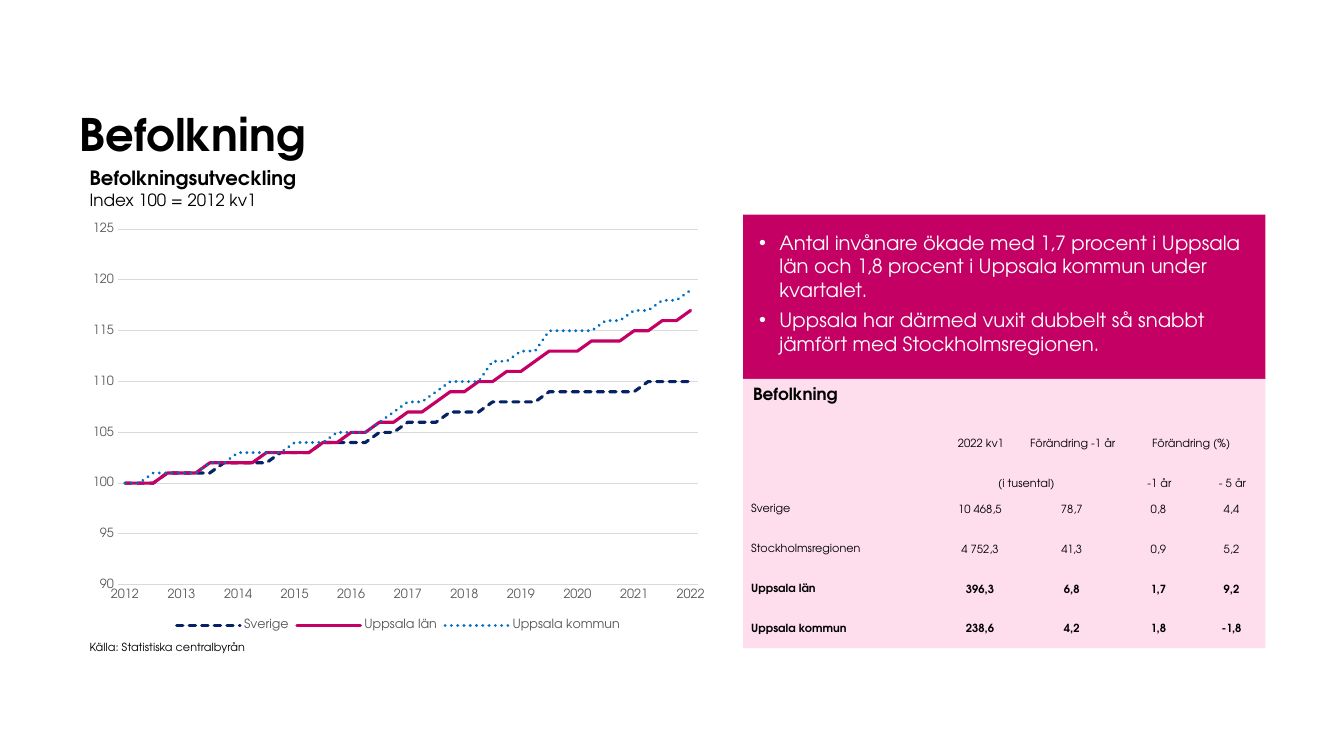
from dataclasses import dataclass

import lxml.etree
import pptx
import pptx.chart.data
import pptx.dml.color
import pptx.enum.chart
import pptx.enum.dml
import pptx.enum.shapes
import pptx.enum.text
import pptx.oxml
import pptx.oxml.ns
import pptx.util

PX = 9144  # 100 px to the inch
NO_TABLE_STYLE = "{2D5ABB26-0587-4C30-8999-92F81FD0307C}"
ALIGN = pptx.enum.text.PP_ALIGN
ANCHOR = pptx.enum.text.MSO_ANCHOR


@dataclass(frozen=True)
class Theme:
    font: str = "TeX Gyre Adventor"
    black: str = "000000"
    white: str = "FFFFFF"
    grey: str = "595959"
    grid: str = "D9D9D9"
    navy: str = "052364"
    magenta: str = "C40064"
    blue: str = "006EBF"
    pink: str = "FEDEED"
    title: int = 32
    lead: int = 14
    label: int = 12
    axis: int = 9
    small: int = 8


THEME = Theme()

YEARS = range(2012, 2023)
QUARTERS = [str(year) if quarter == 0 else ""
            for year in YEARS for quarter in range(4)][:41]
# Name, colour, dash pattern and quarterly index
POPULATION = [
    ("Sverige", THEME.navy, "sysDash", [
        100, 100, 100, 101, 101, 101, 101, 102, 102, 102, 102,
        103, 103, 103, 104, 104, 104, 104, 105, 105, 106, 106,
        106, 107, 107, 107, 108, 108, 108, 108, 109, 109, 109,
        109, 109, 109, 109, 110, 110, 110, 110]),
    ("Uppsala län", THEME.magenta, "solid", [
        100, 100, 100, 101, 101, 101, 102, 102, 102, 102, 103,
        103, 103, 103, 104, 104, 105, 105, 106, 106, 107, 107,
        108, 109, 109, 110, 110, 111, 111, 112, 113, 113, 113,
        114, 114, 114, 115, 115, 116, 116, 117]),
    ("Uppsala kommun", THEME.blue, "sysDot", [
        100, 100, 101, 101, 101, 101, 102, 102, 103, 103, 103,
        103, 104, 104, 104, 105, 105, 105, 106, 107, 108, 108,
        109, 110, 110, 110, 112, 112, 113, 113, 115, 115, 115,
        115, 116, 116, 117, 117, 118, 118, 119]),
]

FINDINGS = [
    "Antal invånare ökade med 1,7 procent i Uppsala län och 1,8 procent i "
    "Uppsala kommun under kvartalet.",
    "Uppsala har därmed vuxit dubbelt så snabbt jämfört med Stockholmsregionen.",
]
TABLE_ROWS = [
    ["", "2022 kv1", "Förändring -1 år", "Förändring (%)", ""],
    ["", "(i tusental)", "", "-1 år", "- 5 år"],
    ["Sverige", "10 468,5", "78,7", "0,8", "4,4"],
    ["Stockholmsregionen", "4 752,3", "41,3", "0,9", "5,2"],
    ["Uppsala län", "396,3", "6,8", "1,7", "9,2"],
    ["Uppsala kommun", "238,6", "4,2", "1,8", "-1,8"],
]


def emu(*lengths):
    return [pptx.util.Emu(length * PX) for length in lengths]


def rgb(code):
    return pptx.dml.color.RGBColor.from_string(code)


def style(font, size, color=THEME.black, bold=False):
    font.name, font.size, font.bold = THEME.font, pptx.util.Pt(size), bold
    font.color.rgb = rgb(color)


def set_margins(holder, left, top, right, bottom):
    (holder.margin_left, holder.margin_top,
     holder.margin_right, holder.margin_bottom) = emu(left, top, right, bottom)


def move(shape, box):
    shape.left, shape.top, shape.width, shape.height = emu(*box)


def add_label(slide, box, text, size, bold=False):
    frame = slide.shapes.add_textbox(*emu(*box)).text_frame
    frame.word_wrap = False
    frame.text = text
    style(frame.paragraphs[0].font, size, bold=bold)


def add_heading(slide, box):
    title = slide.shapes.title
    move(title, box)
    frame = title.text_frame
    frame.text = "Befolkning"
    frame.auto_size = pptx.enum.text.MSO_AUTO_SIZE.NONE
    frame.vertical_anchor = ANCHOR.BOTTOM
    set_margins(frame, 0, 0, 0, 0)
    frame.paragraphs[0].alignment = ALIGN.LEFT
    style(frame.paragraphs[0].font, THEME.title, bold=True)


def add_chart_region(slide, box):
    left, top, width, height = box
    # Chart heading, two lines
    frame = slide.shapes.add_textbox(*emu(left, top, 398, 54)).text_frame
    frame.word_wrap = True
    heading = frame.paragraphs[0]
    name = heading.add_run()
    name.text = "Befolkningsutveckling"
    style(name.font, THEME.lead, bold=True)
    heading.add_line_break()
    unit = heading.add_run()
    unit.text = "Index 100 = 2012 kv1"
    style(unit.font, THEME.label)

    add_index_chart(slide, (left, top + 55, width, height - 79))
    add_label(slide, (left, top + height - 24, 178, 24),
              "Källa: Statistiska centralbyrån", THEME.small)


def add_index_chart(slide, box):
    data = pptx.chart.data.CategoryChartData()
    data.categories = QUARTERS
    for name, _, _, values in POPULATION:
        data.add_series(name, values)
    chart = slide.shapes.add_chart(
        pptx.enum.chart.XL_CHART_TYPE.LINE, *emu(*box), data).chart
    style(chart.font, THEME.axis, THEME.grey)
    chart.has_title = False
    chart.has_legend = True
    chart.legend.position = pptx.enum.chart.XL_LEGEND_POSITION.BOTTOM
    chart.legend.include_in_layout = False
    style(chart.legend.font, THEME.axis, THEME.grey)

    # Lines with round caps
    chart.plots[0].vary_by_categories = False
    for series, (_, color, dash, _) in zip(chart.plots[0].series, POPULATION):
        series.smooth = False
        line = series.format.line
        line.color.rgb, line.width = rgb(color), pptx.util.Pt(2.25)
        line.dash_style = pptx.enum.dml.MSO_LINE.SOLID
        preset = next(series._element.iter(pptx.oxml.ns.qn("a:prstDash")))
        preset.set("val", dash)
        preset.getparent().set("cap", "rnd")

    # Axes
    years, index = chart.category_axis, chart.value_axis
    for axis in (years, index):
        axis.major_tick_mark = pptx.enum.chart.XL_TICK_MARK.NONE
        axis.minor_tick_mark = pptx.enum.chart.XL_TICK_MARK.NONE
        style(axis.tick_labels.font, THEME.axis, THEME.grey)
    index.minimum_scale, index.maximum_scale, index.major_unit = 90, 125, 5
    index.tick_labels.number_format = "0"
    index.tick_labels.number_format_is_linked = False
    index.format.line.fill.background()
    index.has_major_gridlines = True
    for line in (index.major_gridlines.format.line, years.format.line):
        line.color.rgb, line.width = rgb(THEME.grid), pptx.util.Pt(0.75)
    skip = lxml.etree.Element(pptx.oxml.ns.qn("c:tickLblSkip"), val="4")
    years._element.find(pptx.oxml.ns.qn("c:noMultiLvlLbl")).addprevious(skip)

    # Plot area as shares of the chart
    plot_area = chart._chartSpace.chart.plotArea
    for automatic in plot_area.findall(pptx.oxml.ns.qn("c:layout")):
        plot_area.remove(automatic)
    layout = lxml.etree.Element(pptx.oxml.ns.qn("c:layout"))
    manual = lxml.etree.SubElement(layout, pptx.oxml.ns.qn("c:manualLayout"))
    for tag, value in [("layoutTarget", "inner"), ("xMode", "edge"), ("yMode", "edge"),
                       ("x", "0.06"), ("y", "0.03"), ("w", "0.91"), ("h", "0.85")]:
        lxml.etree.SubElement(manual, pptx.oxml.ns.qn("c:" + tag), val=value)
    plot_area.insert(0, layout)


def add_findings(slide, box):
    findings = slide.placeholders[1]
    move(findings, box)
    findings.fill.solid()
    findings.fill.fore_color.rgb = rgb(THEME.magenta)
    frame = findings.text_frame
    frame.auto_size = pptx.enum.text.MSO_AUTO_SIZE.NONE
    set_margins(frame, 16, 16, 16, 16)
    frame.text = "\n".join(FINDINGS)
    for number, finding in enumerate(frame.paragraphs):
        finding.space_before = pptx.util.Pt(5 if number else 0)
        properties = finding._p.get_or_add_pPr()
        properties.set("marL", str(20 * PX))
        properties.set("indent", str(-20 * PX))
        lxml.etree.SubElement(properties, pptx.oxml.ns.qn("a:buChar"), char="•")
        style(finding.font, THEME.lead, THEME.white)


def add_population_table(slide, box):
    left, top, width, height = box
    panel = slide.shapes.add_shape(pptx.enum.shapes.MSO_SHAPE.RECTANGLE, *emu(*box))
    panel.shadow.inherit = False
    panel.fill.solid()
    panel.fill.fore_color.rgb = rgb(THEME.pink)
    panel.line.fill.background()
    add_label(slide, (left, top, 105, 30), "Befolkning", THEME.label, bold=True)

    table = slide.shapes.add_table(
        len(TABLE_ROWS), 5, *emu(left, top + 31, width, height - 30)).table
    table.first_row = table.horz_banding = False
    table._tbl.tblPr.find(pptx.oxml.ns.qn("a:tableStyleId")).text = NO_TABLE_STYLE
    for column, column_width in zip(table.columns, emu(190, 92, 90, 82, 63)):
        column.width = column_width
    table.cell(0, 3).merge(table.cell(0, 4))
    table.cell(1, 1).merge(table.cell(1, 2))

    for r, texts in enumerate(TABLE_ROWS):
        for c, text in enumerate(texts):
            cell = table.cell(r, c)
            cell.fill.background()
            set_margins(cell, *((8, 0, 0, 0) if c == 0 else (1, 1, 1 if r < 2 else 3, 0)))
            cell.vertical_anchor = ANCHOR.BOTTOM if r < 2 else ANCHOR.MIDDLE
            cell.text = text
            entry = cell.text_frame.paragraphs[0]
            entry.alignment = ALIGN.LEFT if c == 0 else ALIGN.CENTER
            style(entry.font, THEME.small, bold=r >= 4)


def main():
    deck = pptx.Presentation()
    deck.slide_width, deck.slide_height = emu(1333, 750)
    slide = deck.slides.add_slide(deck.slide_layouts[1])
    add_heading(slide, (79, 37, 922, 122))
    add_chart_region(slide, (79, 160, 632, 494))
    add_findings(slide, (737, 213, 518, 163))
    add_population_table(slide, (737, 376, 518, 267))
    deck.save("out.pptx")


if __name__ == "__main__":
    main()
